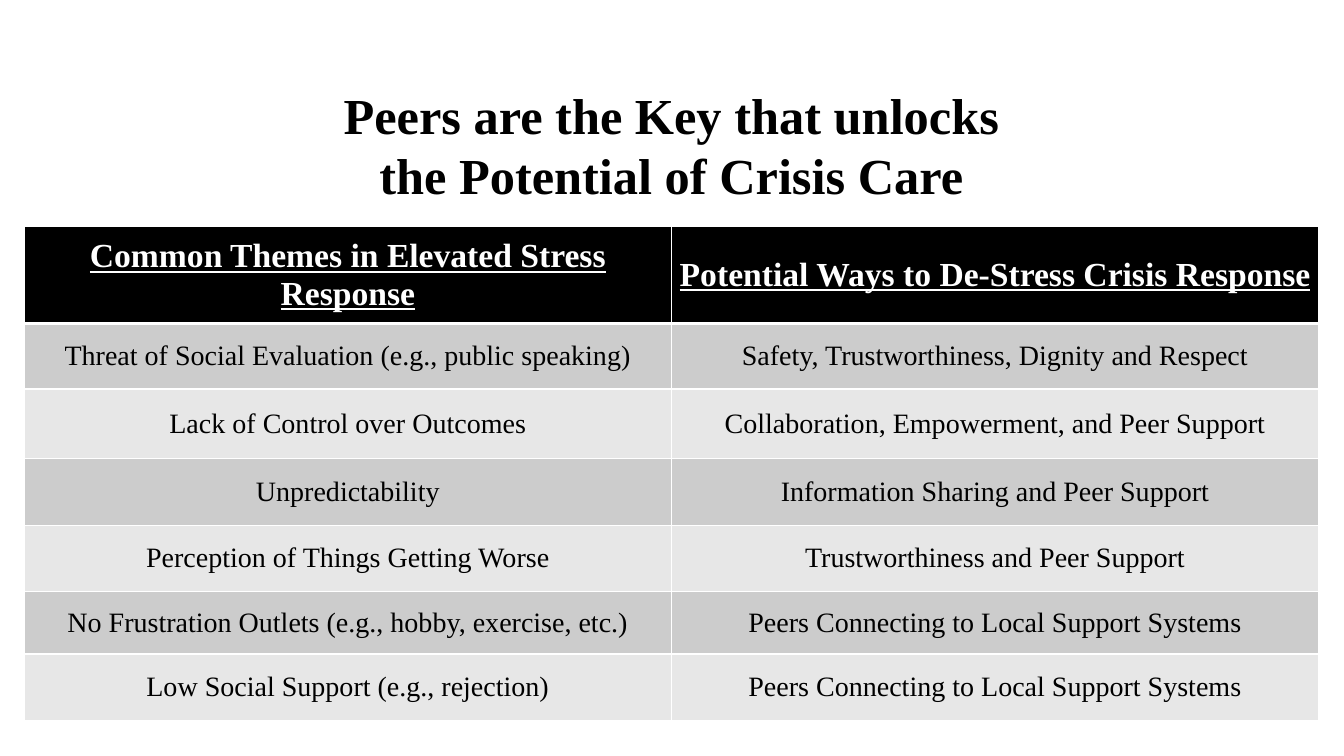
from pptx import Presentation
from pptx.dml.color import RGBColor as RGB
from pptx.enum.text import MSO_ANCHOR as Anchor, PP_ALIGN as Align
from pptx.oxml import parse_xml
from pptx.oxml.ns import nsdecls
from pptx.util import Inches as In, Pt

HUES = {"ink": "000000", "white": "FFFFFF", "dark": "CCCCCC", "light": "E7E7E7"}
WIDE, HIGH = In(13.33), In(7.5)
COL = In(6.42)
TALL = [0.96, 0.65, 0.69, 0.66, 0.66, 0.62, 0.66]
ROWS = [
    ("Common Themes in Elevated Stress Response",
     "Potential Ways to De-Stress Crisis Response"),
    ("Threat of Social Evaluation (e.g., public speaking)",
     "Safety, Trustworthiness, Dignity and Respect"),
    ("Lack of Control over Outcomes",
     "Collaboration, Empowerment, and Peer Support"),
    ("Unpredictability", "Information Sharing and Peer Support"),
    ("Perception of Things Getting Worse", "Trustworthiness and Peer Support"),
    ("No Frustration Outlets (e.g., hobby, exercise, etc.)",
     "Peers Connecting to Local Support Systems"),
    ("Low Social Support (e.g., rejection)",
     "Peers Connecting to Local Support Systems"),
]


def write(frame, text, size, hue, bold):
    para = frame.paragraphs[0]
    para.text = text
    para.alignment = Align.CENTER
    font = para.font
    font.name, font.size, font.bold = "Times New Roman", Pt(size), bold
    font.color.rgb = RGB.from_string(HUES[hue])
    return font


def rule(cell, side, width):
    """Draw a white border on one side (L, R, T or B) of a cell."""
    cell._tc.get_or_add_tcPr().append(parse_xml(
        f'<a:ln{side} {nsdecls("a")} w="{Pt(width)}"><a:solidFill>'
        f'<a:srgbClr val="{HUES["white"]}"/></a:solidFill></a:ln{side}>'))


deck = Presentation()
deck.slide_width, deck.slide_height = WIDE, HIGH
slide = deck.slides.add_slide(deck.slide_layouts[6])

title = slide.shapes.add_textbox(In(3.2), In(0.83), In(6.92), In(1.2)).text_frame
title.word_wrap = True
title.vertical_anchor = Anchor.MIDDLE
write(title, "Peers are the Key that unlocks the Potential of Crisis Care",
      36, "ink", True)

grid = slide.shapes.add_table(len(ROWS), 2, In(0.24), In(2.25),
                              2 * COL, In(sum(TALL))).table
for col in grid.columns:
    col.width = COL

for r, (pair, tall) in enumerate(zip(ROWS, TALL)):
    grid.rows[r].height = In(tall)
    head = r == 0
    shade = "ink" if head else "dark" if r % 2 else "light"
    for c, text in enumerate(pair):
        cell = grid.cell(r, c)
        cell.vertical_anchor = Anchor.MIDDLE
        cell.margin_left = cell.margin_right = In(0.07)
        cell.margin_top = cell.margin_bottom = In(0.04)
        for side in "LRTB":
            thick = head and side == "B" or r == 1 and side == "T"
            rule(cell, side, 3 if thick else 1)
        cell.fill.solid()
        cell.fill.fore_color.rgb = RGB.from_string(HUES[shade])
        font = write(cell.text_frame, text, 24 if head else 20,
                     "white" if head else "ink", head)
        font.underline = head

deck.save("out.pptx")
